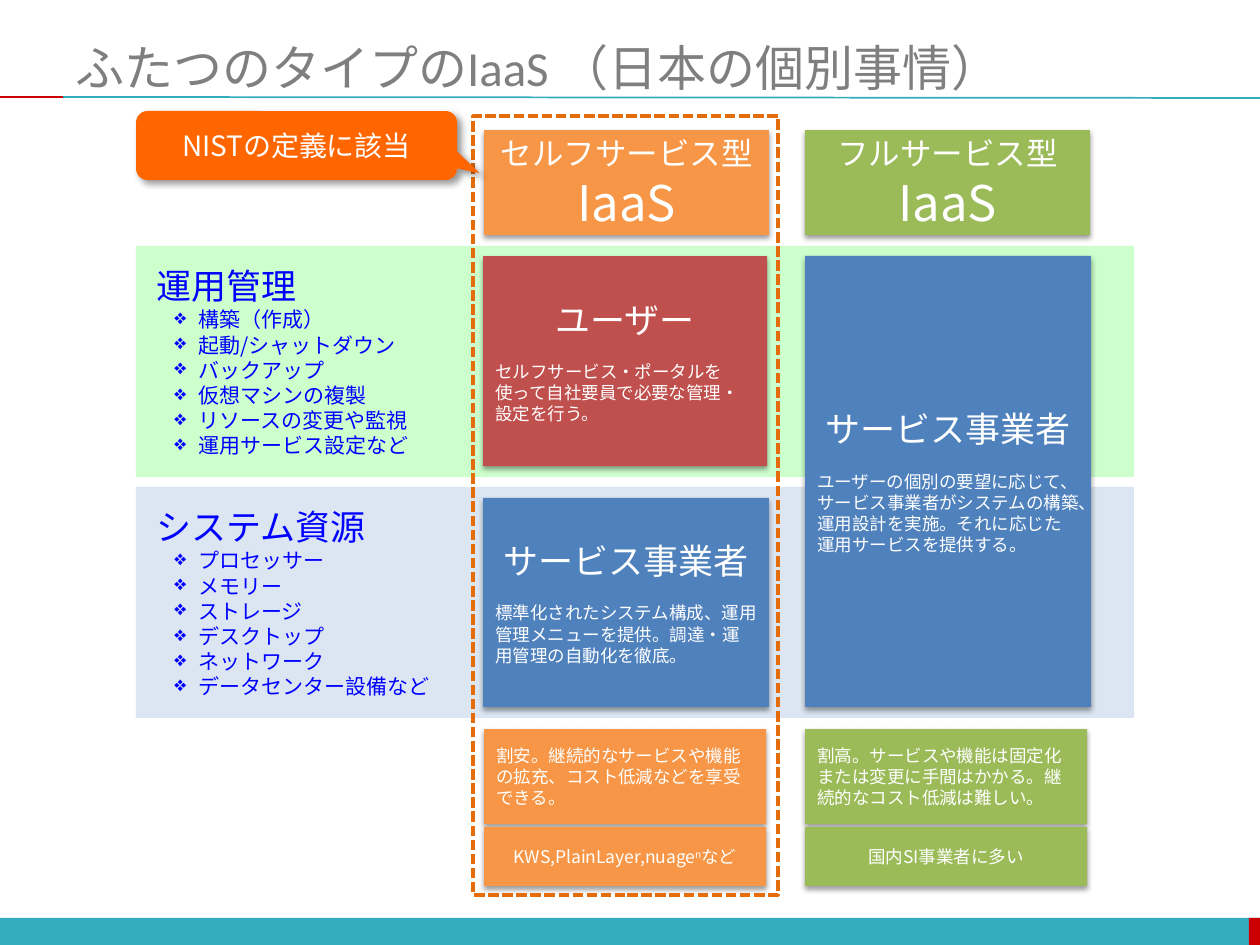
from lxml.etree import SubElement
from pptx import Presentation
from pptx.dml.color import RGBColor
from pptx.enum.dml import MSO_LINE
from pptx.enum.shapes import MSO_CONNECTOR, MSO_SHAPE
from pptx.enum.text import MSO_ANCHOR, MSO_AUTO_SIZE, PP_ALIGN
from pptx.oxml.ns import qn
from pptx.util import Pt

PX = 914400 / 126
LATIN, CJK = "Calibri", "Noto Sans CJK JP"

TEAL = RGBColor(0x33, 0xAC, 0xBD)
RED = RGBColor(0xCC, 0x00, 0x00)
GRAY = RGBColor(0x7F, 0x7F, 0x7F)
WHITE = RGBColor(0xFF, 0xFF, 0xFF)
TEXT_BLUE = RGBColor(0x00, 0x00, 0xFF)
MINT = RGBColor(0xCC, 0xFF, 0xCC)
PALE_BLUE = RGBColor(0xDC, 0xE6, 0xF2)
BLUE = RGBColor(0x4F, 0x81, 0xBD)
BRICK = RGBColor(0xC0, 0x50, 0x4D)
ORANGE = RGBColor(0xF7, 0x96, 0x46)
GREEN = RGBColor(0x9B, 0xBB, 0x59)
DASH_ORANGE = RGBColor(0xE4, 0x6C, 0x0A)
CALLOUT_ORANGE = RGBColor(0xFF, 0x66, 0x00)

# Content
TITLE = "ふたつのタイプのIaaS （日本の個別事情）"
CALLOUT = "NISTの定義に該当"
LAYERS = [
    ("運用管理", MINT, 246,
     ["構築（作成）", "起動/シャットダウン", "バックアップ", "仮想マシンの複製",
      "リソースの変更や監視", "運用サービス設定など"]),
    ("システム資源", PALE_BLUE, 487,
     ["プロセッサー", "メモリー", "ストレージ", "デスクトップ",
      "ネットワーク", "データセンター設備など"]),
]
# Column: left, colour, type, note, examples as (text, raised)
COLUMNS = [
    (484, ORANGE, "セルフサービス型",
     "割安。継続的なサービスや機能の拡充、コスト低減などを享受できる。",
     [("KWS,PlainLayer,nuage", False), ("n", True), ("など", False)]),
    (805, GREEN, "フルサービス型",
     "割高。サービスや機能は固定化または変更に手間はかかる。継続的なコスト低減は難しい。",
     [("国内SI事業者に多い", False)]),
]
# Operator: place, colour, name, duty
OPERATORS = [
    ((483, 498, 286, 209), BLUE, "サービス事業者",
     "標準化されたシステム構成、運用管理メニューを提供。調達・運用管理の自動化を徹底。"),
    ((483, 256, 284, 210), BRICK, "ユーザー",
     "セルフサービス・ポータルを使って自社要員で必要な管理・設定を行う。"),
    ((805, 256, 286, 451), BLUE, "サービス事業者",
     "ユーザーの個別の要望に応じて、サービス事業者がシステムの構築、運用設計を実施。"
     "それに応じた運用サービスを提供する。"),
]
CARD_SHADOW = (38, 3.1, 1.6, 90)
CALLOUT_SHADOW = (40, 4, 3, 45)


def emu(*lengths):
    return [round(length * PX) for length in lengths]


def add_span(para, text, size, color, latin=CJK, raised=False):
    span = para.add_run()
    span.text = text
    span.font.size = Pt(size)
    span.font.name = latin
    span.font.color.rgb = color
    props = span.font._element
    SubElement(props, qn("a:ea")).set("typeface", CJK)
    if raised:
        props.set("baseline", "30000")


def add_para(box, text, size, color=WHITE, align=PP_ALIGN.LEFT, gap=0):
    """Add a paragraph; text is a string or a list of (text, raised)."""
    frame = box.text_frame
    para = frame.paragraphs[0] if not frame.text else frame.add_paragraph()
    para.alignment = align
    if gap:
        para.space_before = Pt(gap)
    parts = [(text, False)] if isinstance(text, str) else text
    for part, raised in parts:
        add_span(para, part, size, color, raised=raised)
    return para


def indent(para, left, first=0, bullet=None):
    props = para._p.get_or_add_pPr()
    props.set("marL", str(emu(left)[0]))
    props.set("indent", str(emu(first)[0]))
    if bullet:
        SubElement(props, qn("a:buChar")).set("char", bullet)


def add_shadow(box, alpha, blur, distance, angle):
    effects = box._element.spPr.find(qn("a:effectLst"))
    shadow = SubElement(effects, qn("a:outerShdw"), blurRad=str(Pt(blur)),
                        dist=str(Pt(distance)), dir=str(angle * 60000),
                        rotWithShape="0")
    color = SubElement(shadow, qn("a:srgbClr"), val="000000")
    SubElement(color, qn("a:alpha"), val=str(alpha * 1000))


def add_box(page, place, fill, kind=MSO_SHAPE.RECTANGLE):
    box = page.shapes.add_shape(kind, *emu(*place))
    box.shadow.inherit = False
    if fill is None:
        box.fill.background()
    else:
        box.fill.solid()
        box.fill.fore_color.rgb = fill
    box.line.fill.background()
    box.text_frame.word_wrap = True
    box.text_frame.vertical_anchor = MSO_ANCHOR.MIDDLE
    return box


def add_card(page, place, fill):
    card = add_box(page, place, fill, MSO_SHAPE.ROUNDED_RECTANGLE)
    card.adjustments[0] = 0
    add_shadow(card, *CARD_SHADOW)
    return card


def add_rule(page, ends, color):
    rule = page.shapes.add_connector(MSO_CONNECTOR.STRAIGHT, *emu(*ends))
    rule.line.color.rgb = color
    rule.line.width = Pt(1)
    SubElement(rule._element.spPr, qn("a:effectLst"))


def main():
    deck = Presentation()
    deck.slide_width, deck.slide_height = emu(1260, 945)
    page = deck.slides.add_slide(deck.slide_layouts[5])

    # Title, rules and foot band
    title = page.shapes.title
    title.left, title.top, title.width, title.height = emu(63, 38, 1197, 58)
    frame = title.text_frame
    frame.auto_size = MSO_AUTO_SIZE.NONE
    frame.vertical_anchor = MSO_ANCHOR.MIDDLE
    frame.paragraphs[0].alignment = PP_ALIGN.LEFT
    add_span(frame.paragraphs[0], TITLE, 28, GRAY, LATIN)
    add_box(page, (0, 918, 1260, 27), TEAL)
    add_box(page, (1249, 918, 11, 27), RED)
    add_rule(page, (63, 97, 1260, 98), TEAL)
    add_rule(page, (0, 97, 63, 97), RED)

    # Layer bands with their bullet lists
    for name, fill, top, items in LAYERS:
        band = add_box(page, (136, top, 998, 231), fill)
        indent(add_para(band, name, 20, TEXT_BLUE), 8)
        for item in items:
            para = add_para(band, item, 12, TEXT_BLUE)
            para.level = 1
            indent(para, 50, -24, "❖")

    # Who operates each layer
    for place, fill, name, duty in OPERATORS:
        card = add_card(page, place, fill)
        add_para(card, name, 20, align=PP_ALIGN.CENTER)
        add_para(card, duty, 10, gap=12)

    # Column heads, notes and examples
    for left, fill, kind, note, examples in COLUMNS:
        head = add_card(page, (left, 130, 285, 105), fill)
        add_para(head, kind, 18, align=PP_ALIGN.CENTER)
        add_para(head, "IaaS", 28, align=PP_ALIGN.CENTER)
        add_para(add_card(page, (left, 729, 282, 95), fill), note, 10)
        foot = add_card(page, (left, 827, 282, 59), fill)
        add_para(foot, examples, 10, align=PP_ALIGN.CENTER)

    # Dashed frame and callout
    outline = add_box(page, (473, 116, 305, 779), None)
    outline.line.color.rgb = DASH_ORANGE
    outline.line.width = Pt(2)
    outline.line.dash_style = MSO_LINE.SQUARE_DOT
    callout = add_box(page, (136, 111, 321, 69), CALLOUT_ORANGE,
                      MSO_SHAPE.ROUNDED_RECTANGULAR_CALLOUT)
    callout.adjustments[0], callout.adjustments[1] = 0.57, 0.4
    add_shadow(callout, *CALLOUT_SHADOW)
    add_para(callout, CALLOUT, 16, align=PP_ALIGN.CENTER)

    deck.save("out.pptx")


if __name__ == "__main__":
    main()
